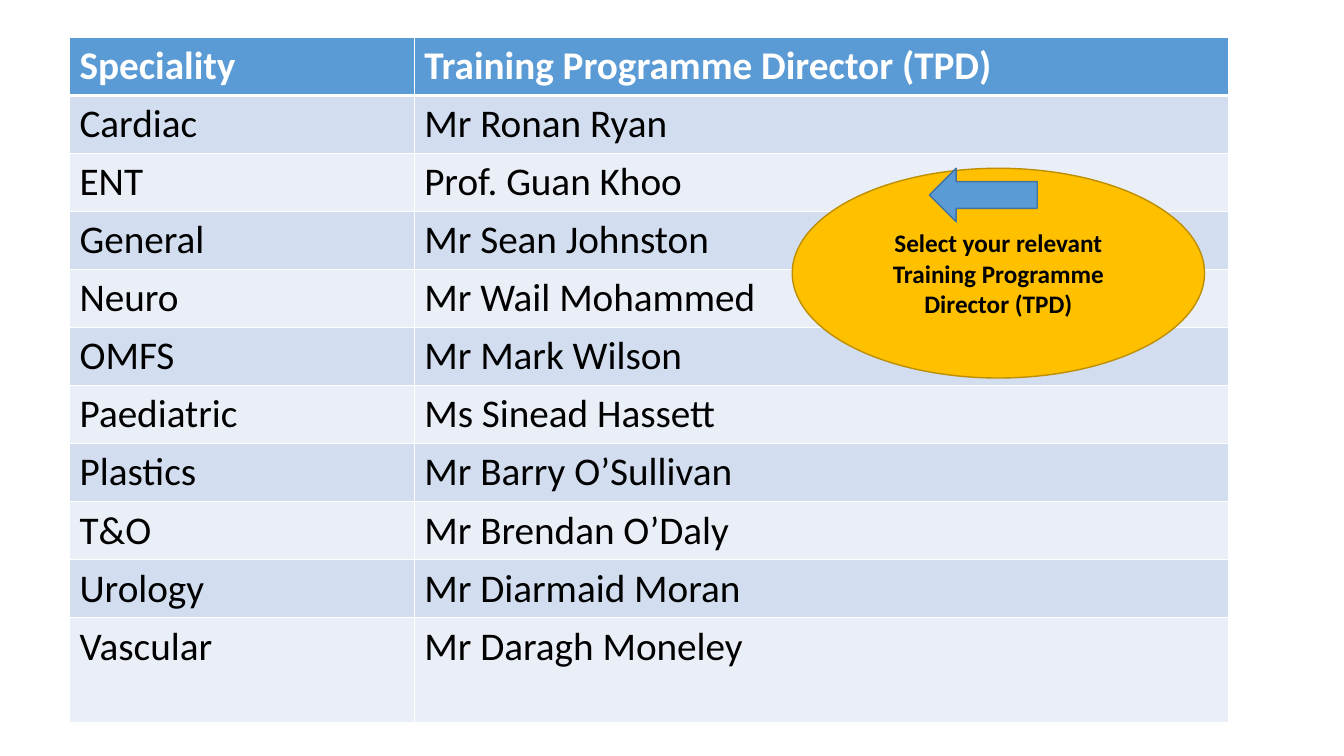
from pptx import Presentation
from pptx.dml.color import RGBColor as Rgb
from pptx.enum.shapes import MSO_SHAPE as Kind
from pptx.enum.text import MSO_ANCHOR as Anchor, PP_ALIGN as Align
from pptx.oxml.ns import qn
from pptx.util import Pt
from lxml.etree import SubElement as Sub

WHITE = Rgb(0xFF, 0xFF, 0xFF)
BLACK = Rgb(0, 0, 0)
BLUE = Rgb(0x5B, 0x9B, 0xD5)
NAVY = Rgb(0x43, 0x73, 0x9E)
PALE = Rgb(0xEA, 0xEF, 0xF7)
LIGHT = Rgb(0xD2, 0xDE, 0xEF)
GOLD = Rgb(0xFF, 0xC0, 0x00)
BROWN = Rgb(0xBD, 0x8E, 0x00)

STAFF = [
    ("Speciality", "Training Programme Director (TPD)"),
    ("Cardiac", "Mr Ronan Ryan"),
    ("ENT", "Prof. Guan Khoo"),
    ("General", "Mr Sean Johnston"),
    ("Neuro", "Mr Wail Mohammed"),
    ("OMFS", "Mr Mark Wilson"),
    ("Paediatric", "Ms Sinead Hassett"),
    ("Plastics", "Mr Barry O’Sullivan"),
    ("T&O", "Mr Brendan O’Daly"),
    ("Urology", "Mr Diarmaid Moran"),
    ("Vascular", "Mr Daragh Moneley"),
]


def write(frame, text, size, color, bold):
    para = frame.paragraphs[0]
    run = para.add_run()
    run.text = text
    font = run.font
    font.name, font.size, font.bold = "Calibri", Pt(size), bold
    font.color.rgb = color
    return para


def edge(cell, row):
    props = cell._tc.get_or_add_tcPr()
    top = 3 if row == 1 else 1
    base = 3 if row == 0 else 1
    for side, width in (("L", 1), ("R", 1), ("T", top), ("B", base)):
        line = Sub(props, qn(f"a:ln{side}"), w=str(Pt(width)))
        fill = Sub(line, qn("a:solidFill"))
        Sub(fill, qn("a:srgbClr"), val=str(WHITE))


def add_staff(slide, left, top, width, height):
    count = len(STAFF)
    table = slide.shapes.add_table(
        count, 2, Pt(left), Pt(top), Pt(width), Pt(height)).table
    first, pitch = 246.2, 41.4
    table.columns[0].width = Pt(first)
    table.columns[1].width = Pt(width - first)
    for i, names in enumerate(STAFF):
        last = i == count - 1
        table.rows[i].height = Pt(height - pitch * i if last else pitch)
        head = i == 0
        shade = BLUE if head else LIGHT if i % 2 else PALE
        for j, name in enumerate(names):
            cell = table.cell(i, j)
            edge(cell, i)
            cell.fill.solid()
            cell.fill.fore_color.rgb = shade
            write(cell.text_frame, name, 28, WHITE if head else BLACK, head)


def add_form(slide, kind, box, fill, line):
    form = slide.shapes.add_shape(kind, *map(Pt, box))
    form.shadow.inherit = False
    form.fill.solid()
    form.fill.fore_color.rgb = fill
    form.line.color.rgb = line
    form.line.width = Pt(1)
    return form


def add_hint(slide, left, top, width, height):
    oval = add_form(slide, Kind.OVAL, (left, top, width, height), GOLD, BROWN)
    frame = oval.text_frame
    frame.word_wrap = True
    frame.vertical_anchor = Anchor.MIDDLE
    para = write(frame, "Select your relevant Training Programme Director (TPD)",
                 18, BLACK, True)
    para.alignment = Align.CENTER
    add_form(slide, Kind.LEFT_ARROW, (left + 98, top, 77, 38.2), BLUE, NAVY)


def main():
    deck = Presentation()
    deck.slide_width, deck.slide_height = Pt(960), Pt(540)
    slide = deck.slides.add_slide(deck.slide_layouts[6])
    add_staff(slide, 49.7, 26.8, 828, 489)
    add_hint(slide, 565.9, 120.2, 294.5, 149.8)
    deck.save("out.pptx")


if __name__ == "__main__":
    main()
